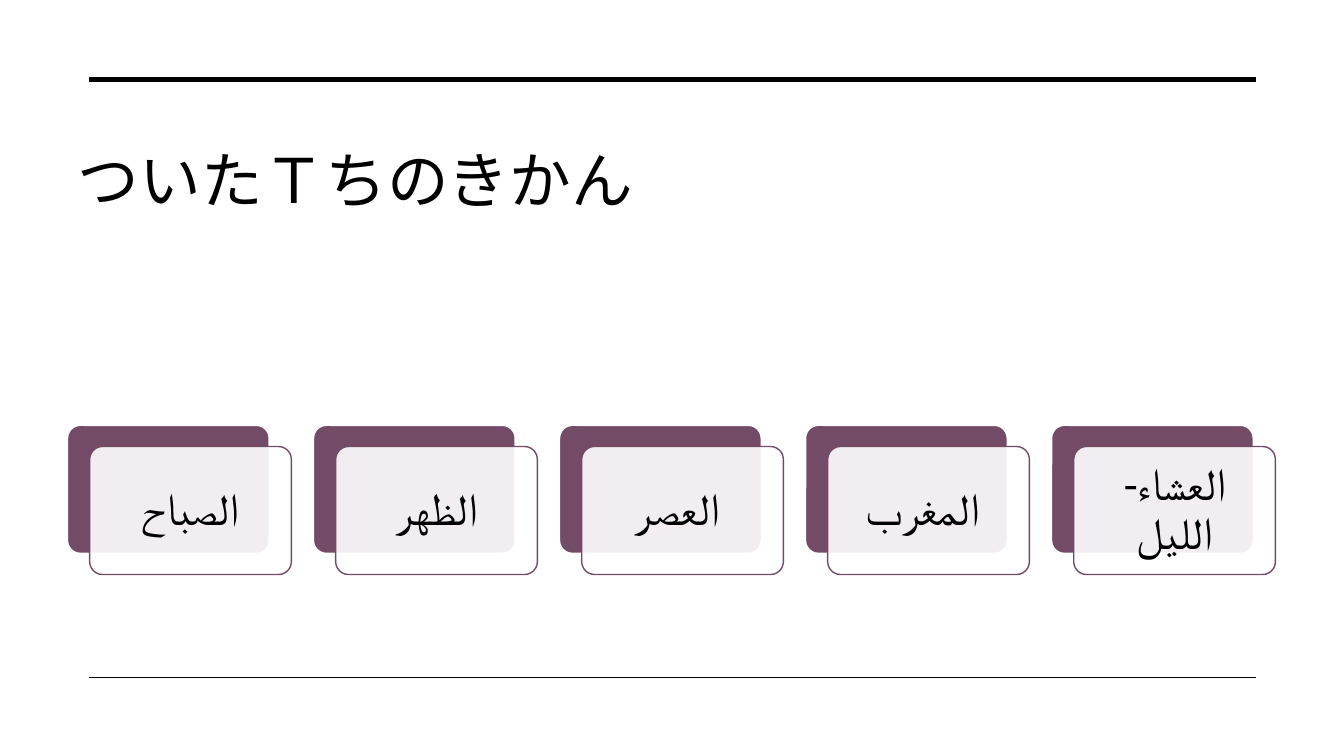
from dataclasses import dataclass

from lxml import etree
from pptx import Presentation
from pptx.dml.color import RGBColor
from pptx.enum.shapes import MSO_CONNECTOR, MSO_SHAPE
from pptx.enum.text import MSO_ANCHOR, PP_ALIGN
from pptx.oxml.ns import qn
from pptx.util import Pt

STRAIGHT = MSO_CONNECTOR.STRAIGHT
ROUND = MSO_SHAPE.ROUNDED_RECTANGLE
MIDDLE, BOTTOM = MSO_ANCHOR.MIDDLE, MSO_ANCHOR.BOTTOM
LEFT, CENTER = PP_ALIGN.LEFT, PP_ALIGN.CENTER
SCALE = 9144  # EMU per px, 100 px to the inch


@dataclass(frozen=True)
class Theme:
    ink: str = "000000"
    paper: str = "FFFFFF"
    plum: str = "734B67"
    head: str = "Arial Narrow"
    body: str = "Calibri"
    title: int = 44
    label: int = 32


THEME = Theme()
TIMES = ["الصباح", "الظهر", "العصر ", "المغرب ", "العشاء-الليل"]


def px(*nums):
    return [n * SCALE for n in nums]


def rgb(code):
    return RGBColor.from_string(code)


def add_rule(slide, y, width):
    line = slide.shapes.add_connector(STRAIGHT, *px(88, y, 1246, y))
    line.line.color.rgb = rgb(THEME.ink)
    line.line.width = Pt(width)
    etree.SubElement(line._element.spPr, qn("a:effectLst"))


def add_card(slide, x, y, fill, edge, alpha=100):
    card = slide.shapes.add_shape(ROUND, *px(x, y, 200, 127))
    card.adjustments[0] = 0.1
    card.shadow.inherit = False
    card.fill.solid()
    card.fill.fore_color.rgb = rgb(fill)
    card.line.color.rgb = rgb(edge)
    card.line.width = Pt(1)
    if alpha < 100:
        color = card._element.spPr.find(qn("a:solidFill"))[0]
        etree.SubElement(color, qn("a:alpha"), val=str(alpha * 1000))


def add_text(slide, text, box, *, font, size, anchor, align=LEFT,
             inset=(10, 5), leading=None, track=None):
    frame = slide.shapes.add_textbox(*px(*box)).text_frame
    frame.word_wrap = True
    frame.vertical_anchor = anchor
    frame.margin_left = frame.margin_right = inset[0] * SCALE
    frame.margin_top = frame.margin_bottom = inset[1] * SCALE
    para = frame.paragraphs[0]
    para.alignment = align
    para.line_spacing = leading
    run = para.add_run()
    run.text = text
    run.font.name = font
    run.font.size = Pt(size)
    run.font.color.rgb = rgb(THEME.ink)
    if track:
        run.font._element.set("spc", str(track))


def add_time(slide, text, x, y):
    add_card(slide, x, y, THEME.plum, THEME.paper)
    add_card(slide, x + 22, y + 21, THEME.paper, THEME.plum, alpha=90)
    add_text(slide, text, (x + 26, y + 25, 192, 119), font=THEME.body,
             size=THEME.label, anchor=MIDDLE, align=CENTER,
             inset=(13, 13), leading=0.9)


def main():
    deck = Presentation()
    deck.slide_width, deck.slide_height = px(1333, 750)
    slide = deck.slides.add_slide(deck.slide_layouts[6])

    # Rules above and below the content
    add_rule(slide, 79, 3.5)
    add_rule(slide, 672, 1)

    # Title
    add_text(slide, "ついたＴちのきかん", (67, 61, 1200, 158), font=THEME.head,
             size=THEME.title, anchor=BOTTOM, track=30)

    # Row of times of day
    for i, text in enumerate(TIMES):
        add_time(slide, text, 67 + 244 * i, 422)

    deck.save("out.pptx")


if __name__ == "__main__":
    main()
